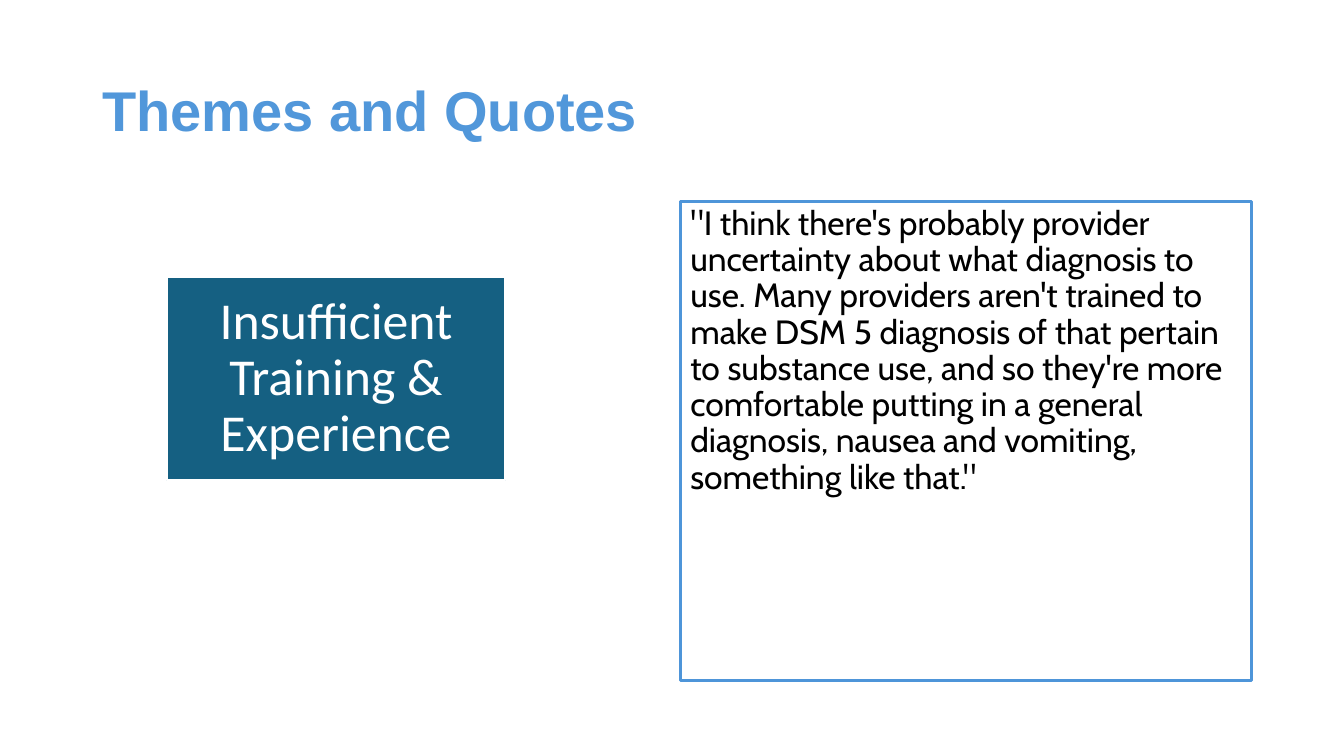
import pptx
import pptx.dml.color
import pptx.enum.shapes
import pptx.enum.text
import pptx.util

Pt = pptx.util.Pt
ALIGN = pptx.enum.text.PP_ALIGN
ANCHOR = pptx.enum.text.MSO_ANCHOR
COLOURS = {
    "title": "5197DA",
    "theme": "156082",
    "border": "4E95D9",
    "white": "FFFFFF",
    "black": "000000",
}
THEME = "Insufficient Training & Experience"
QUOTE = (
    '"I think there\'s probably provider uncertainty about what diagnosis to use. '
    "Many providers aren't trained to make DSM 5 diagnosis of that pertain to "
    "substance use, and so they're more comfortable putting in a general diagnosis, "
    'nausea and vomiting, something like that."'
)


def colour(name):
    """Return the named colour."""
    return pptx.dml.color.RGBColor.from_string(COLOURS[name])


def apply(target, values):
    """Set each attribute of the target from a dict."""
    for name, value in values.items():
        setattr(target, name, value)


def write(shape, text, ink, font, para_format, frame_format):
    """Write one formatted paragraph into a shape."""
    frame = shape.text_frame
    apply(frame, {"word_wrap": True, "auto_size": pptx.enum.text.MSO_AUTO_SIZE.NONE})
    apply(frame, frame_format)
    para = frame.paragraphs[0]
    apply(para, {"line_spacing": 0.9, **para_format})
    span = para.add_run()
    span.text = text
    apply(span.font, font)
    span.font.color.rgb = colour(ink)


def add_box(page, box, fill, line, width):
    """Draw a flat rectangle, unfilled when fill is None."""
    shape = page.shapes.add_shape(
        pptx.enum.shapes.MSO_SHAPE.RECTANGLE, *map(Pt, box)
    )
    shape.shadow.inherit = False
    if fill:
        shape.fill.solid()
        shape.fill.fore_color.rgb = colour(fill)
    else:
        shape.fill.background()
    shape.line.color.rgb = colour(line)
    shape.line.width = Pt(width)
    return shape


def place_title(page, box, text):
    """Move the title placeholder into its box and fill it."""
    title = page.shapes.title
    apply(title, dict(zip(("left", "top", "width", "height"), map(Pt, box))))
    write(title, text, "title", {"name": "Arial", "size": Pt(40), "bold": True},
          {"alignment": ALIGN.LEFT}, {"vertical_anchor": ANCHOR.MIDDLE})


def add_theme(page, box, text):
    """Draw the filled theme block."""
    shape = add_box(page, box, "theme", "white", 1.5)
    margins = ("margin_left", "margin_top", "margin_right", "margin_bottom")
    write(shape, text, "white", {"name": "Calibri", "size": Pt(37)},
          {"alignment": ALIGN.CENTER},
          {"vertical_anchor": ANCHOR.MIDDLE, **dict.fromkeys(margins, Pt(10.8))})


def add_quote(page, box, text):
    """Draw the outlined quote panel."""
    shape = add_box(page, box, None, "border", 2.25)
    write(shape, text, "black", {"name": "Cabin", "size": Pt(24)},
          {"alignment": ALIGN.LEFT, "space_before": Pt(10)},
          {"vertical_anchor": ANCHOR.TOP})


def main():
    """Build and save the deck."""
    deck = pptx.Presentation()
    apply(deck, {"slide_width": Pt(960), "slide_height": Pt(540)})
    page = deck.slides.add_slide(deck.slide_layouts[5])
    place_title(page, (66, 28.75, 828, 104.4), "Themes and Quotes")
    add_theme(page, (119, 198, 242, 145.2), THEME)
    add_quote(page, (486, 143.75, 408, 342.6), QUOTE)
    deck.save("out.pptx")


if __name__ == "__main__":
    main()
